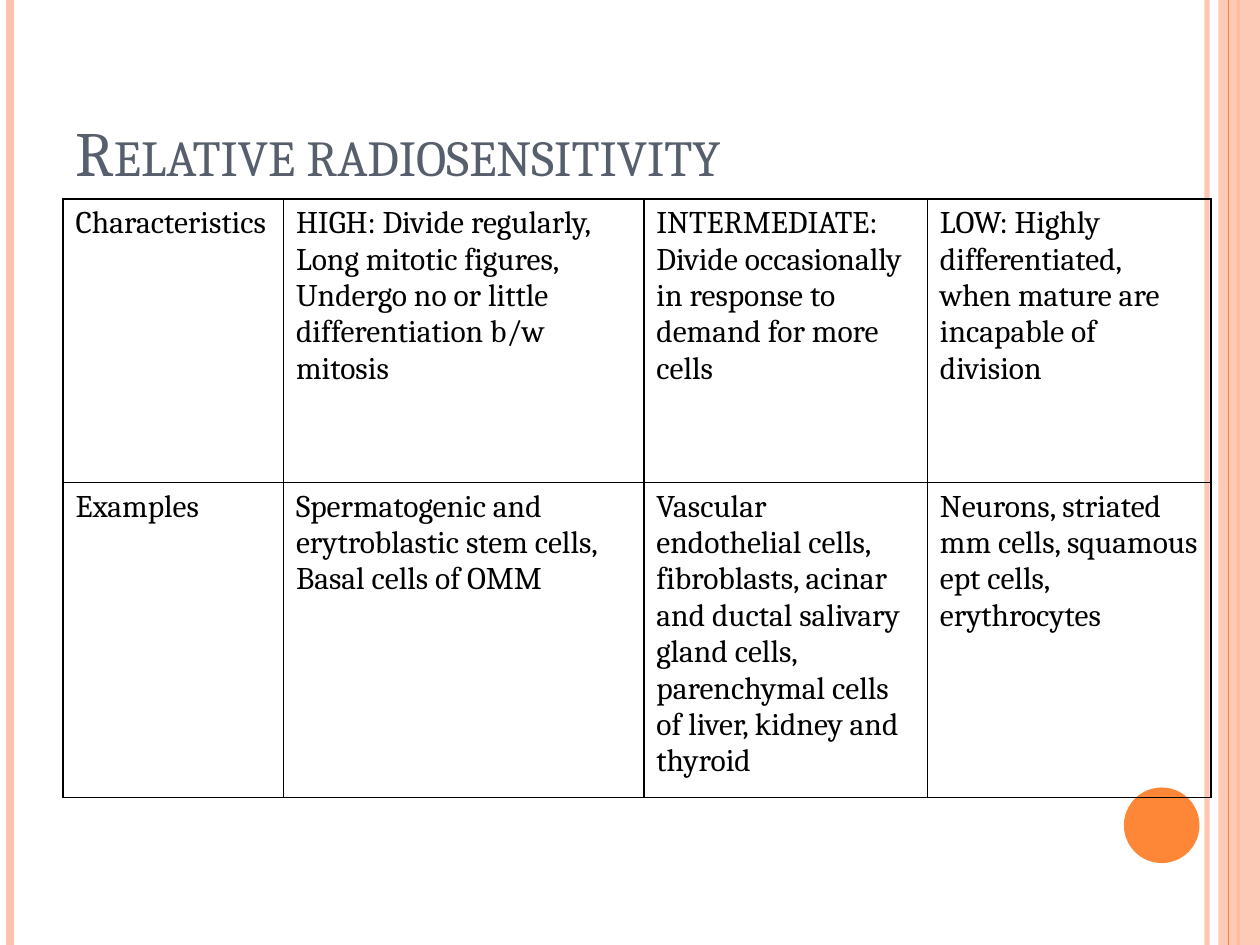
from lxml import etree
from pptx import Presentation
from pptx.dml.color import RGBColor
from pptx.enum.shapes import MSO_CONNECTOR, MSO_SHAPE
from pptx.enum.text import MSO_ANCHOR
from pptx.oxml.ns import qn
from pptx.util import Inches, Pt

STRAIGHT = MSO_CONNECTOR.STRAIGHT
RECTANGLE, OVAL = MSO_SHAPE.RECTANGLE, MSO_SHAPE.OVAL
BOTTOM = MSO_ANCHOR.BOTTOM
FONT = "Cambria"
COLORS = {"peach": "FEC3AE", "orange": "FE8637", "title": "575F6D", "black": "000000"}


def add_rule(x, color, weight):
    """Draw a vertical rule over the full height of the slide."""
    rule = slide.shapes.add_connector(
        STRAIGHT, Inches(x), Inches(0), Inches(x), Inches(7.5))
    rule.line.color.rgb = RGBColor.from_string(COLORS[color])
    rule.line.width = Pt(weight)
    etree.SubElement(rule._element.spPr, qn("a:effectLst"))
    return rule


def add_plain_shape(kind, left, top, width, height, color):
    """Draw a filled shape without an outline."""
    shape = slide.shapes.add_shape(
        kind, Inches(left), Inches(top), Inches(width), Inches(height))
    shape.shadow.inherit = False
    shape.fill.solid()
    shape.fill.fore_color.rgb = RGBColor.from_string(COLORS[color])
    shape.line.fill.background()
    return shape


presentation = Presentation()
presentation.slide_width = Inches(10)
presentation.slide_height = Inches(7.5)
slide = presentation.slides.add_slide(presentation.slide_layouts[6])

# Vertical rules, side band and corner dot, from back to front
inner_rule = add_rule(9.58, "peach", 3)
add_rule(0.08, "peach", 4.5)
add_rule(9.83, "orange", 1.5)
band = add_plain_shape(RECTANGLE, 9.67, 0, 0.33, 7.5, "peach")
add_rule(9.75, "orange", 0.75)
add_plain_shape(OVAL, 8.92, 6.25, 0.6, 0.6, "orange")

# Opacity of the inner rule and the band, in percent
for shape, opacity in ((inner_rule, 93), (band, 87)):
    color = shape._element.spPr.find(".//" + qn("a:srgbClr"))
    etree.SubElement(color, qn("a:alpha"), val=str(opacity * 1000))

# Title in small capitals
title = slide.shapes.add_textbox(Inches(0.5), Inches(0.3), Inches(8.17), Inches(1.25))
title.text_frame.word_wrap = True
title.text_frame.vertical_anchor = BOTTOM
run = title.text_frame.paragraphs[0].add_run()
run.text = "Relative radiosensitivity"
run.font.name = FONT
run.font.size = Pt(36)
run.font.color.rgb = RGBColor.from_string(COLORS["title"])
run._r.get_or_add_rPr().set("cap", "small")

# Table of characteristics and examples; the second row grows with its text
rows = [
    [
        "Characteristics",
        "HIGH: Divide regularly,\nLong mitotic figures,\n"
        "Undergo no or little differentiation b/w mitosis",
        "INTERMEDIATE: Divide occasionally in response to demand for more cells",
        "LOW: Highly differentiated, when mature are incapable of division",
    ],
    [
        "Examples",
        "Spermatogenic and erytroblastic stem cells,\nBasal cells of OMM",
        "Vascular endothelial cells, fibroblasts, acinar and ductal salivary gland "
        "cells, parenchymal cells of liver, kidney and thyroid",
        "Neurons, striated mm cells, squamous ept cells, erythrocytes",
    ],
]
column_widths = [1.75, 2.86, 2.25, 2.25]
row_heights = [2.25, 0.73]
table = slide.shapes.add_table(
    len(rows), len(column_widths), Inches(0.5), Inches(1.58),
    Inches(sum(column_widths)), Inches(sum(row_heights))).table
table.first_row = False
table.horz_banding = False
for column, width in zip(table.columns, column_widths):
    column.width = Inches(width)
for row, height in zip(table.rows, row_heights):
    row.height = Inches(height)

for row_index, texts in enumerate(rows):
    for column_index, text in enumerate(texts):
        cell = table.cell(row_index, column_index)
        cell.text = text
        cell.fill.background()
        for paragraph in cell.text_frame.paragraphs:
            paragraph.font.name = FONT
            paragraph.font.size = Pt(18)
            paragraph.font.color.rgb = RGBColor.from_string(COLORS["black"])
        # Borders come before the fill in the cell properties
        properties = cell._tc.get_or_add_tcPr()
        for position, side in enumerate(("a:lnL", "a:lnR", "a:lnT", "a:lnB")):
            border = etree.Element(qn(side), w=str(Pt(1)))
            solid = etree.SubElement(border, qn("a:solidFill"))
            etree.SubElement(solid, qn("a:srgbClr"), val=COLORS["black"])
            properties.insert(position, border)

presentation.save("out.pptx")
